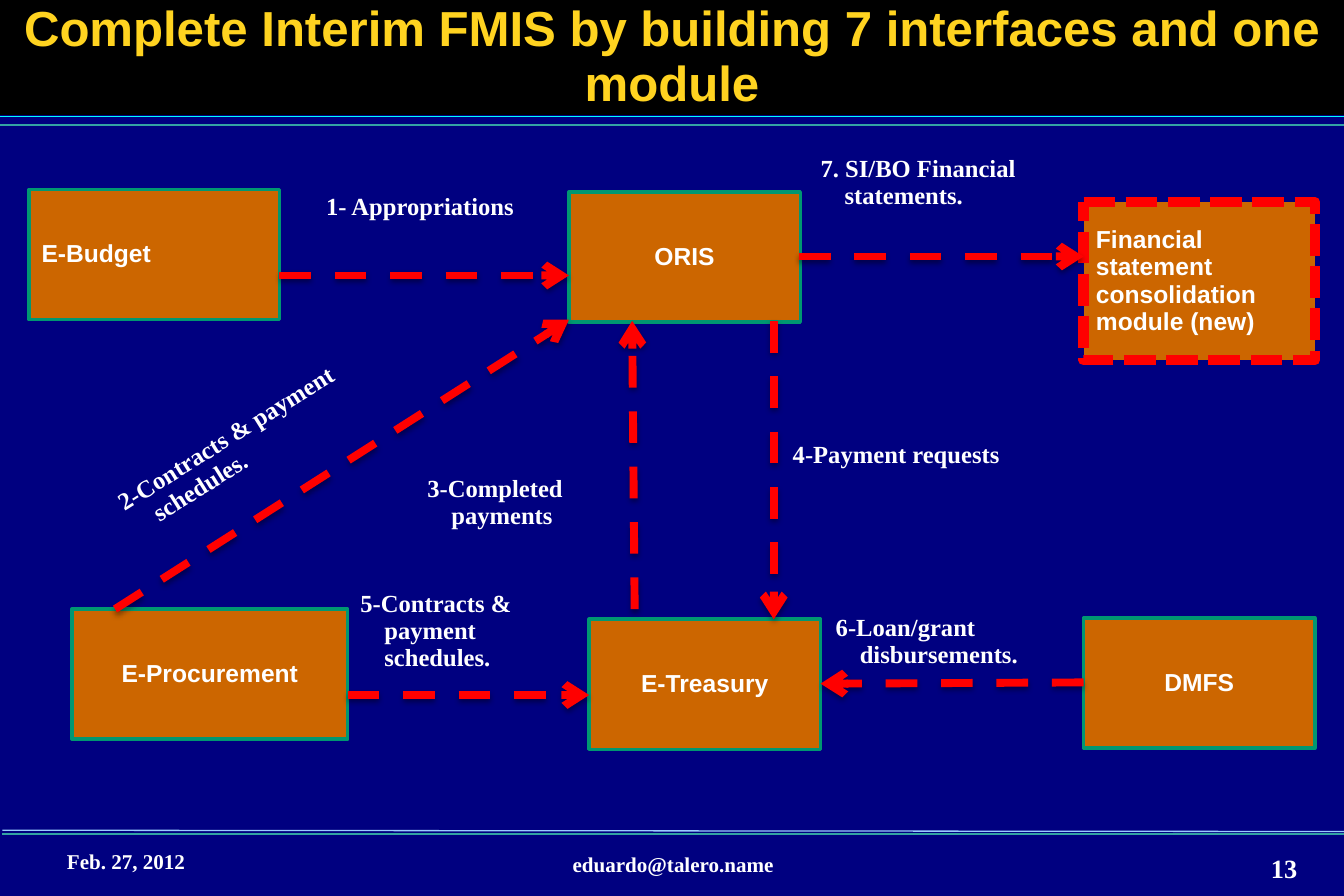
from lxml import etree
from pptx import Presentation
from pptx.dml.color import RGBColor
from pptx.enum.dml import MSO_LINE
from pptx.enum.shapes import MSO_CONNECTOR, MSO_SHAPE
from pptx.enum.text import MSO_ANCHOR, PP_ALIGN
from pptx.oxml import parse_xml
from pptx.util import Inches, Pt

COLORS = {
    "background": "000080", "title_band": "000000", "title": "FFD320",
    "text": "FFFFFF", "box": "CC6600", "box_line": "009771", "red": "FF0000",
    "cyan": "00FFFF", "teal": "33A3A3", "pale_blue": "99CCFF",
}
WIDTH, HEIGHT = 10.63, 7.09
SANS, SERIF = "Arial", "Times New Roman"
LEFT, CENTER, RIGHT = PP_ALIGN.LEFT, PP_ALIGN.CENTER, PP_ALIGN.RIGHT
HANGING = 0.19

TITLE = "Complete Interim FMIS by building 7 interfaces and one module"
# start, end, color
RULES = [
    ((0, 0.92), (WIDTH, 0.92), "cyan"),
    ((0, 0.99), (WIDTH, 0.99), "teal"),
    ((0.02, 6.57), (10.65, 6.58), "pale_blue"),
    ((0.02, 6.6), (10.65, 6.6), "teal"),
]
# text, (left, top, width, height), size, alignment
FOOTERS = [
    ("Feb. 27, 2012", (0.53, 6.73, 2.47, 0.29), 12, LEFT),
    ("eduardo@talero.name", (3.64, 6.75, 3.37, 0.29), 12, CENTER),
    ("13", (9.25, 6.76, 1.01, 0.24), 15, RIGHT),
]
# text, (left, top, width, height), alignment
SYSTEMS = [
    ("E-Treasury", (4.66, 4.9, 1.83, 1.03), CENTER),
    ("E-Budget", (0.23, 1.5, 1.98, 1.03), LEFT),
    ("E-Procurement", (0.57, 4.82, 2.18, 1.03), CENTER),
    ("ORIS", (4.5, 1.52, 1.83, 1.03), CENTER),
    ("DMFS", (8.57, 4.89, 1.83, 1.03), CENTER),
]
NEW_MODULE = ("Financial statement consolidation module (new)",
              (8.57, 1.6, 1.83, 1.25), LEFT)
# label, (left, top, width, height), rotation, arrow start, arrow end
INTERFACES = [
    ("1- Appropriations", (2.58, 1.53, 1.53, 0.3), 0, (2.21, 2.18), (4.5, 2.18)),
    ("2-Contracts & payment schedules.", (0.85, 3.11, 2.81, 0.64), 328,
     (0.91, 4.82), (4.5, 2.53)),
    ("3-Completed payments", (3.38, 3.76, 1.53, 0.61), 0, (5.02, 4.82), (5, 2.54)),
    ("4-Payment requests", (6.27, 3.49, 1.74, 0.61), 0, (6.12, 2.54), (6.12, 4.9)),
    ("5-Contracts & payment schedules.", (2.85, 4.67, 1.74, 0.83), 0,
     (2.75, 5.5), (4.66, 5.5)),
    ("6-Loan/grant disbursements.", (6.61, 4.86, 1.85, 0.48), 0,
     (8.57, 5.4), (6.49, 5.41)),
    ("7. SI/BO Financial statements.", (6.49, 1.23, 1.99, 0.64), 0,
     (6.32, 2.03), (8.57, 2.03)),
]

DRAWING = "http://schemas.openxmlformats.org/drawingml/2006/main"
SHADOW = (
    f'<a:effectLst xmlns:a="{DRAWING}">'
    f'<a:outerShdw blurRad="{Pt(3.1)}" dist="{Pt(1.6)}" dir="5400000" rotWithShape="0">'
    '<a:srgbClr val="000000"><a:alpha val="38000"/></a:srgbClr>'
    '</a:outerShdw></a:effectLst>'
)
NO_SHADOW = f'<a:effectLst xmlns:a="{DRAWING}"/>'


def rgb(name):
    return RGBColor.from_string(COLORS[name])


def write(shape, text, font, size, alignment, color="text", spacing=0.93):
    frame = shape.text_frame
    frame.word_wrap = True
    paragraph = frame.paragraphs[0]
    paragraph.text = text
    paragraph.alignment = alignment
    paragraph.line_spacing = spacing
    paragraph.font.name = font
    paragraph.font.size = Pt(size)
    paragraph.font.bold = True
    paragraph.font.color.rgb = rgb(color)
    return paragraph


def remove_insets(frame):
    frame.margin_left = frame.margin_top = 0
    frame.margin_right = frame.margin_bottom = 0


def add_text(slide, text, place, size, alignment, spacing=0.93):
    shape = slide.shapes.add_textbox(*map(Inches, place))
    remove_insets(shape.text_frame)
    return shape, write(shape, text, SERIF, size, alignment, spacing=spacing)


def add_label(slide, text, place, rotation):
    shape, paragraph = add_text(slide, text, place, 14, LEFT)
    shape.rotation = rotation
    properties = paragraph._p.get_or_add_pPr()
    properties.set("marL", str(Inches(HANGING)))
    properties.set("indent", str(-Inches(HANGING)))


def add_box(slide, place, fill, kind):
    shape = slide.shapes.add_shape(kind, *map(Inches, place))
    shape.shadow.inherit = False
    shape.fill.solid()
    shape.fill.fore_color.rgb = rgb(fill)
    shape.line.fill.background()
    shape.text_frame.vertical_anchor = MSO_ANCHOR.MIDDLE
    return shape


def add_system(slide, text, place, alignment, line_color="box_line", line_width=2):
    shape = add_box(slide, place, "box", MSO_SHAPE.FLOWCHART_PROCESS)
    shape.line.color.rgb = rgb(line_color)
    shape.line.width = Pt(line_width)
    write(shape, text, SANS, 14, alignment)
    return shape


def add_line(slide, start, end, color, width, effects=NO_SHADOW):
    line = slide.shapes.add_connector(
        MSO_CONNECTOR.STRAIGHT, *map(Inches, (*start, *end)))
    line.line.color.rgb = rgb(color)
    line.line.width = Pt(width)
    line._element.spPr.append(parse_xml(effects))
    return line


def add_arrow(slide, start, end):
    arrow = add_line(slide, start, end, "red", 4.5, SHADOW)
    arrow.line.dash_style = MSO_LINE.DASH
    outline = arrow.line._get_or_add_ln()
    etree.SubElement(outline, f"{{{DRAWING}}}tailEnd", type="arrow")


def main():
    presentation = Presentation()
    presentation.slide_width = Inches(WIDTH)
    presentation.slide_height = Inches(HEIGHT)
    slide = presentation.slides.add_slide(presentation.slide_layouts[6])
    slide.background.fill.solid()
    slide.background.fill.fore_color.rgb = rgb("background")

    for start, end, color in RULES:
        add_line(slide, start, end, color, 0.75)
    title = add_box(slide, (0, 0, WIDTH, 0.91), "title_band", MSO_SHAPE.RECTANGLE)
    remove_insets(title.text_frame)
    write(title, TITLE, SANS, 28, CENTER, "title")

    for system in SYSTEMS:
        add_system(slide, *system)
    module = add_system(slide, *NEW_MODULE, line_color="red", line_width=6)
    module.line.dash_style = MSO_LINE.SQUARE_DOT

    for label, place, rotation, start, end in INTERFACES:
        add_arrow(slide, start, end)
        add_label(slide, label, place, rotation)
    for footer in FOOTERS:
        add_text(slide, *footer, spacing=0.95)

    presentation.save("out.pptx")


if __name__ == "__main__":
    main()
